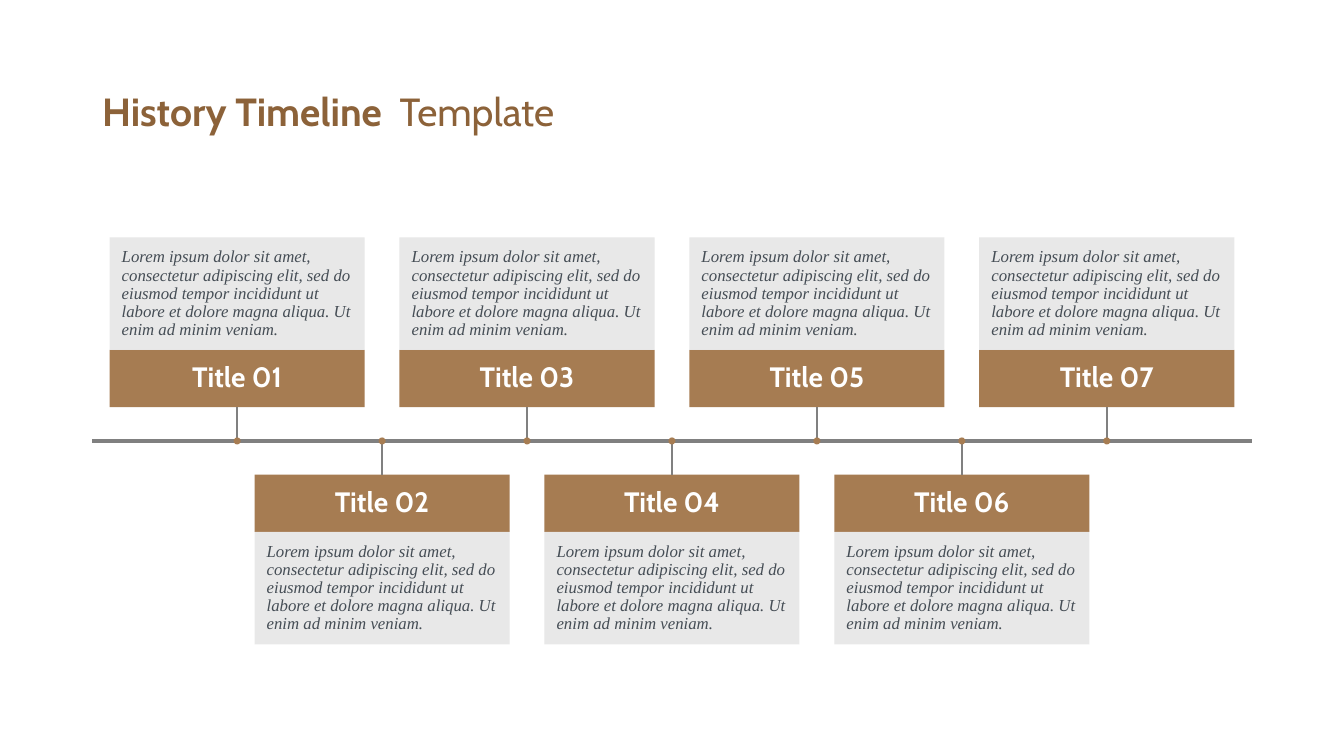
from dataclasses import dataclass

from lxml import etree
from pptx import Presentation
from pptx.dml.color import RGBColor
from pptx.enum.shapes import MSO_CONNECTOR, MSO_SHAPE
from pptx.enum.text import MSO_ANCHOR, PP_ALIGN
from pptx.oxml.ns import qn
from pptx.util import Inches, Pt

RECTANGLE, OVAL = MSO_SHAPE.RECTANGLE, MSO_SHAPE.OVAL
STRAIGHT = MSO_CONNECTOR.STRAIGHT
MIDDLE = MSO_ANCHOR.MIDDLE
LEFT, CENTER = PP_ALIGN.LEFT, PP_ALIGN.CENTER

COLORS = {
    "heading": "8C6239",
    "brown": "A67C52",
    "panel": "E6E6E6",
    "line": "808080",
    "body": "454D55",
    "white": "FFFFFF",
}
FORMATS = {
    "heading": {"name": "Cabin", "size": Pt(28), "bold": True},
    "heading_light": {"name": "Cabin", "size": Pt(28), "bold": False},
    "label": {"name": "Cabin", "size": Pt(20), "bold": True},
    "body": {"name": "Times New Roman", "size": Pt(12), "italic": True},
}

PAGE_WIDTH, PAGE_HEIGHT = Inches(13.33), Inches(7.5)
COLUMN = Inches(11.5) / 8  # the axis spans eight columns, centred on the page
MARGIN = (PAGE_WIDTH - 8 * COLUMN) / 2
ROW = PAGE_HEIGHT / 100  # one percent of the page height

AXIS_ROW = 58.33
STEM_ROWS, LABEL_ROWS, BODY_ROWS = 4.47, 7.57, 14.88
CARD_COLUMNS = 1.76
DOT = Inches(0.07)
BODY_TEXT = (
    "Lorem ipsum dolor sit amet, consectetur adipiscing elit, sed do eiusmod "
    "tempor incididunt ut labore et dolore magna aliqua. Ut enim ad minim veniam."
)


@dataclass(frozen=True)
class Milestone:
    number: int

    @property
    def title(self) -> str:
        return f"Title {self.number:02d}"

    @property
    def above(self) -> bool:
        return self.number % 2 == 1

    def top(self, distance: float, rows: float) -> float:
        """Top row of a block that starts `distance` rows away from the axis."""
        return AXIS_ROW - distance - rows if self.above else AXIS_ROW + distance


def x(columns: float) -> int:
    return round(MARGIN + columns * COLUMN)


def y(rows: float) -> int:
    return round(rows * ROW)


def rgb(color: str) -> RGBColor:
    return RGBColor.from_string(COLORS[color])


def add_span(para, text: str, style: str, color: str):
    span = para.add_run()
    span.text = text
    for name, value in FORMATS[style].items():
        setattr(span.font, name, value)
    span.font.color.rgb = rgb(color)
    return span


def set_frame(box, inset: float, align: PP_ALIGN):
    """Prepare the text frame and return its first paragraph."""
    frame = box.text_frame
    settings = {
        "word_wrap": True,
        "vertical_anchor": MIDDLE,
        "margin_left": Inches(inset),
        "margin_right": Inches(inset),
        "margin_top": Inches(inset),
        "margin_bottom": Inches(inset),
    }
    for name, value in settings.items():
        setattr(frame, name, value)
    para = frame.paragraphs[0]
    para.alignment = align
    para.line_spacing = 0.9
    return para


def add_filled(page, kind: MSO_SHAPE, left: int, top: int, width: int, height: int, color: str):
    shape = page.shapes.add_shape(kind, left, top, width, height)
    shape.shadow.inherit = False
    shape.fill.solid()
    shape.fill.fore_color.rgb = rgb(color)
    shape.line.fill.background()
    return shape


def add_block(page, center: float, top: float, rows: float, color: str):
    return add_filled(page, RECTANGLE, x(center - CARD_COLUMNS / 2), y(top),
                      round(CARD_COLUMNS * COLUMN), y(rows), color)


def add_line(page, start: tuple[float, float], end: tuple[float, float], points: float) -> None:
    line = page.shapes.add_connector(STRAIGHT, x(start[0]), y(start[1]), x(end[0]), y(end[1]))
    line.line.color.rgb = rgb("line")
    line.line.width = Pt(points)
    etree.SubElement(line._element.spPr, qn("a:effectLst"))


def add_heading(page) -> None:
    box = page.shapes.add_textbox(x(0), y(5.33), round(8 * COLUMN), y(19.33))
    para = set_frame(box, 0.1, LEFT)
    add_span(para, "History Timeline", "heading", "heading")
    gap = add_span(para, " ", "heading", "heading")
    gap.font._element.set("spc", "640")  # widens the gap between the two parts
    add_span(para, "Template", "heading_light", "heading")


def add_milestone(page, milestone: Milestone) -> None:
    center = milestone.number
    label = add_block(page, center, milestone.top(STEM_ROWS, LABEL_ROWS), LABEL_ROWS, "brown")
    add_span(set_frame(label, 0.11, CENTER), milestone.title, "label", "white")

    body_top = milestone.top(STEM_ROWS + LABEL_ROWS, BODY_ROWS)
    body = add_block(page, center, body_top, BODY_ROWS, "panel")
    panel_color = body._element.spPr.find(qn("a:solidFill")).find(qn("a:srgbClr"))
    etree.SubElement(panel_color, qn("a:alpha")).set("val", "90000")
    add_span(set_frame(body, 0.12, LEFT), BODY_TEXT, "body", "body")

    stem_top = milestone.top(0, STEM_ROWS)
    add_line(page, (center, stem_top), (center, stem_top + STEM_ROWS), 1.5)
    add_filled(page, OVAL, x(center) - DOT // 2, y(AXIS_ROW) - DOT // 2, DOT, DOT, "brown")


def main() -> None:
    deck = Presentation()
    deck.slide_width, deck.slide_height = PAGE_WIDTH, PAGE_HEIGHT
    page = deck.slides.add_slide(deck.slide_layouts[6])
    add_heading(page)
    add_line(page, (0, AXIS_ROW), (8, AXIS_ROW), 3)
    for number in range(1, 8):
        add_milestone(page, Milestone(number))
    deck.save("out.pptx")


if __name__ == "__main__":
    main()
